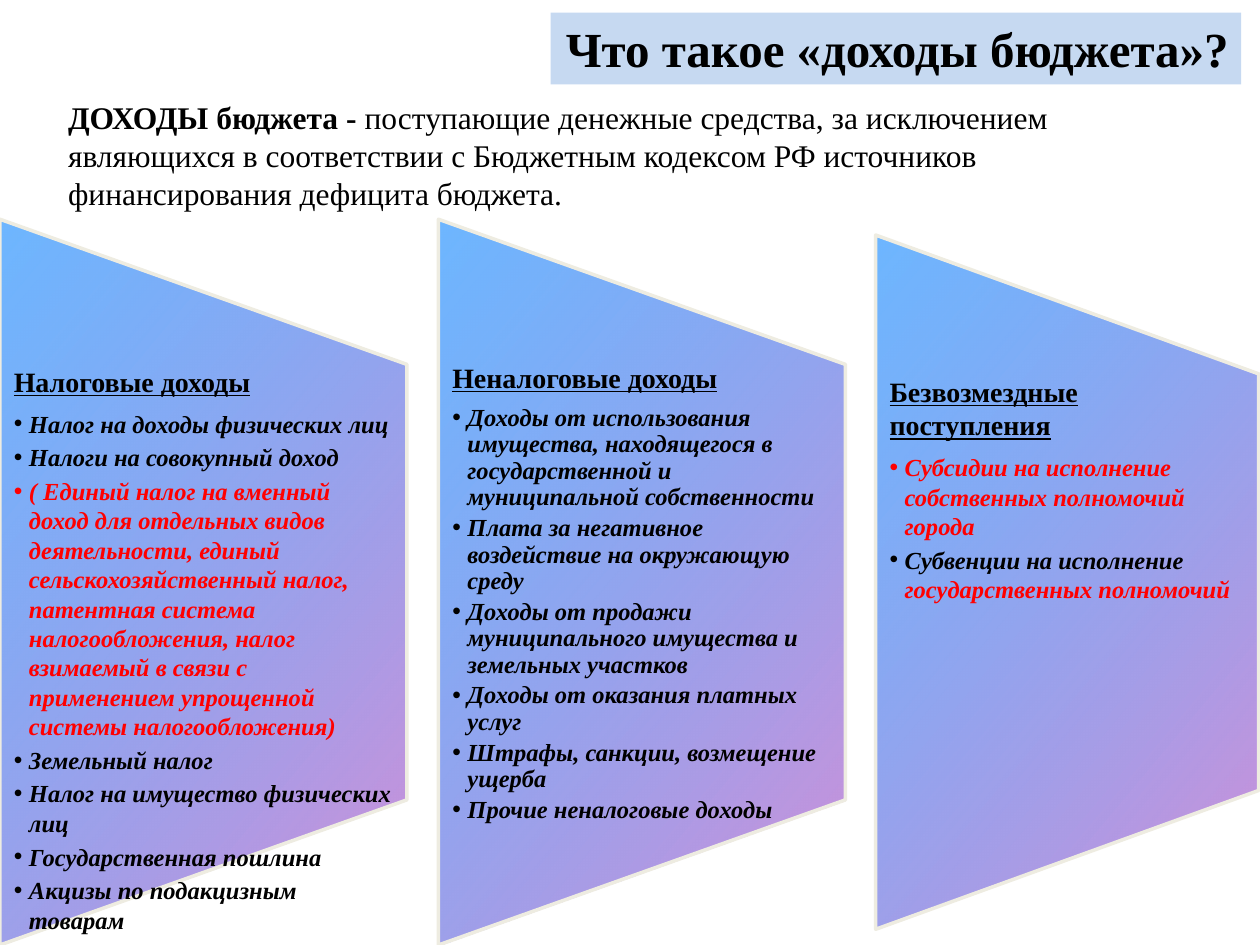
from lxml.etree import SubElement
from pptx import Presentation
from pptx.dml.color import RGBColor
from pptx.enum.shapes import MSO_SHAPE
from pptx.enum.text import MSO_ANCHOR, MSO_AUTO_SIZE, PP_ALIGN
from pptx.oxml.ns import qn
from pptx.util import Inches, Pt

FONT = "Times New Roman"
BLACK, RED = "000000", "FF0000"
TITLE = "Что такое «доходы бюджета»?"
DEFINITION = [
    [("ДОХОДЫ бюджета - ", True), ("поступающие денежные средства, за исключением", False)],
    [("являющихся в соответствии с Бюджетным кодексом РФ источников", False)],
    [("финансирования дефицита бюджета.", False)],
]
# Each item is a list of (text, colour) spans.
COLUMNS = [
    {
        "heading": "Налоговые доходы",
        "box": (0, 2.89, 3.23, 3.46), "panel_height": 5.76, "line_spacing": 1.0,
        "items": [
            [("Налог на доходы физических лиц", BLACK)],
            [("Налоги на совокупный доход", BLACK)],
            [("( Единый налог на вменный доход для отдельных видов деятельности, "
              "единый сельскохозяйственный налог, патентная система налогообложения, "
              "налог взимаемый в связи с применением упрощенной системы "
              "налогообложения)", RED)],
            [("Земельный налог", BLACK)],
            [("Налог на имущество физических лиц", BLACK)],
            [("Государственная пошлина", BLACK)],
            [("Акцизы по подакцизным товарам", BLACK)],
        ],
    },
    {
        "heading": "Неналоговые доходы",
        "box": (3.48, 2.89, 3.23, 3.46), "panel_height": 5.76, "line_spacing": 0.9,
        "items": [
            [("Доходы от использования имущества, находящегося в государственной "
              "и муниципальной собственности", BLACK)],
            [("Плата за негативное воздействие на окружающую среду", BLACK)],
            [("Доходы от продажи муниципального имущества и земельных участков", BLACK)],
            [("Доходы от оказания платных услуг", BLACK)],
            [("Штрафы, санкции, возмещение ущерба", BLACK)],
            [("Прочие неналоговые доходы", BLACK)],
        ],
    },
    {
        "heading": "Безвозмездные поступления",
        "box": (6.95, 2.97, 3.04, 3.3), "panel_height": 5.51, "line_spacing": 1.0,
        "items": [
            [("Субсидии на исполнение собственных полномочий города", RED)],
            [("Субвенции на исполнение ", BLACK), ("государственных полномочий", RED)],
        ],
    },
]


def color(value):
    return RGBColor.from_string(value)


def place(shape, left, top, width, height):
    shape.left, shape.top = Inches(left), Inches(top)
    shape.width, shape.height = Inches(width), Inches(height)


def prepare(box, side=0.1, edge=0.05):
    frame = box.text_frame
    frame.word_wrap = True
    frame.auto_size = MSO_AUTO_SIZE.NONE
    frame.vertical_anchor = MSO_ANCHOR.TOP
    frame.margin_left = frame.margin_right = Inches(side)
    frame.margin_top = frame.margin_bottom = Inches(edge)
    return frame


def add_para(frame, index, after=0, line_spacing=1.0, left=0, bullet=False):
    para = frame.paragraphs[0] if index == 0 else frame.add_paragraph()
    para.alignment = PP_ALIGN.LEFT
    para.space_before, para.space_after = Pt(0), Pt(after)
    para.line_spacing = line_spacing
    properties = para._p.get_or_add_pPr()
    properties.set("marL", str(Inches(left)))
    properties.set("indent", str(Inches(-left if bullet else 0)))
    if bullet:
        SubElement(properties, qn("a:buChar")).set("char", "•")
    else:
        SubElement(properties, qn("a:buNone"))
    return para


def add_span(para, text, size, value=BLACK, bold=True, italic=False, underline=False):
    span = para.add_run()
    span.text = text
    font = span.font
    font.name, font.size = FONT, Pt(size)
    font.bold, font.italic, font.underline = bold, italic, underline
    font.color.rgb = color(value)


def add_panel(page, column):
    """Draw the trapezoid, turned a quarter left, behind the column's text."""
    left, top, width, text_height = column["box"]
    length = column["panel_height"]
    panel = page.shapes.add_shape(MSO_SHAPE.FLOWCHART_MANUAL_OPERATION, 0, 0, 0, 0)
    place(panel, left + (width - length) / 2, top + (text_height - width) / 2, length, width)
    panel.rotation = 270
    panel.shadow.inherit = False
    panel.line.color.rgb = color("EEECE1")
    panel.line.width = Pt(2)
    panel.fill.gradient()
    panel.fill.gradient_angle = 320
    for stop, value in zip(panel.fill.gradient_stops, ("3399FF", "D190D8")):
        stop.color.rgb = color(value)
    gradient = panel._element.spPr.find(qn("a:gradFill"))
    gradient.set("rotWithShape", "0")
    SubElement(gradient.find(".//" + qn("a:srgbClr")), qn("a:alpha")).set("val", "71000")
    page.shapes._spTree.insert(2, panel._element)


def fill_column(box, column):
    place(box, *column["box"])
    frame = prepare(box, side=0.11, edge=0)
    spacing = column["line_spacing"]
    heading = add_para(frame, 0, after=6.2, line_spacing=spacing)
    add_span(heading, column["heading"], 16, underline=True)
    for index, item in enumerate(column["items"], 1):
        para = add_para(frame, index, after=2.4, line_spacing=spacing, left=0.12, bullet=True)
        for text, value in item:
            add_span(para, text, 14, value, italic=True)


def main():
    deck = Presentation()
    deck.slide_width, deck.slide_height = Inches(10), Inches(7.5)
    page = deck.slides.add_slide(deck.slide_layouts.get_by_name("Comparison"))
    title = page.shapes.title
    definition, *lists = [box for box in page.placeholders if box != title]

    place(title, 4.37, 0.1, 5.48, 0.57)
    title.fill.solid()
    title.fill.fore_color.rgb = color("C6D9F1")
    para = add_para(prepare(title), 0)
    para.alignment = PP_ALIGN.RIGHT
    add_span(para, TITLE, 28)

    place(definition, -1.06, 0.73, 10.08, 1.01)
    frame = prepare(definition)
    for index, spans in enumerate(DEFINITION):
        para = add_para(frame, index, left=1.5)
        for text, bold in spans:
            add_span(para, text, 18, bold=bold)

    for box, column in zip(lists, COLUMNS):
        add_panel(page, column)
        fill_column(box, column)
    deck.save("out.pptx")


if __name__ == "__main__":
    main()
